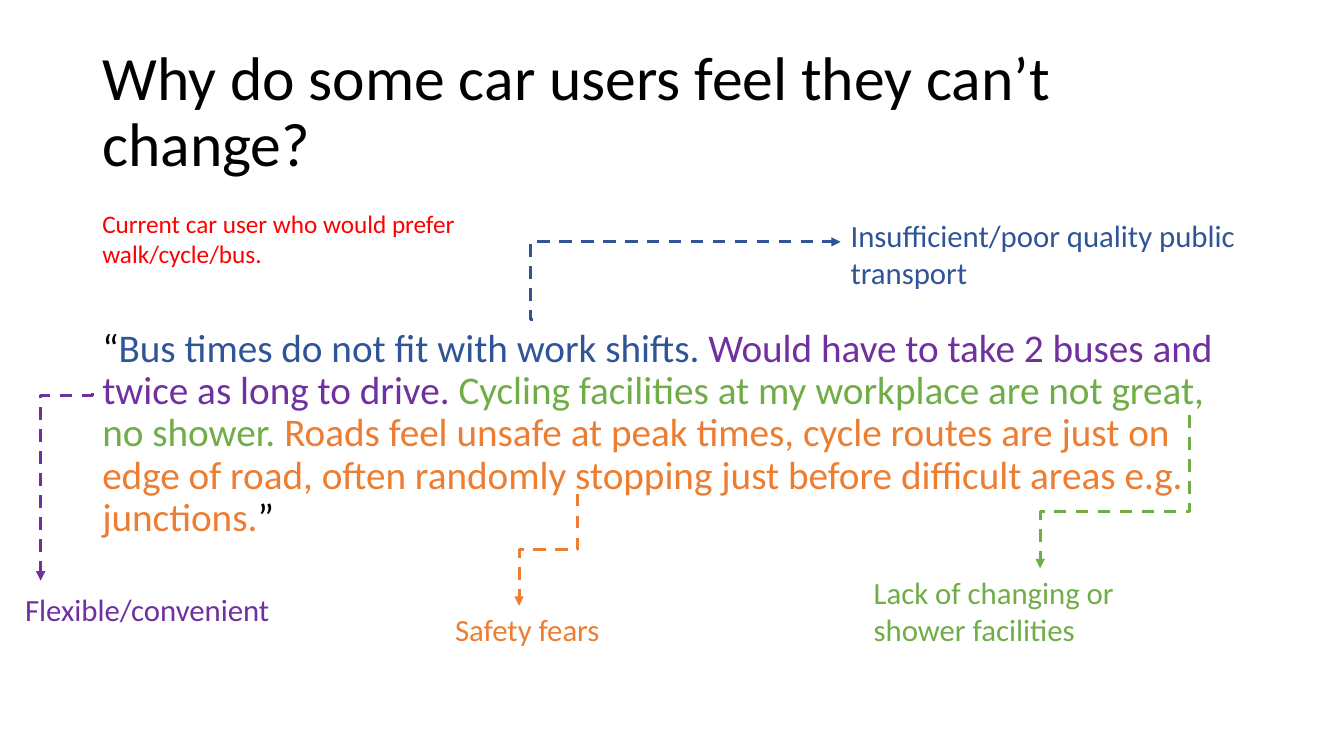
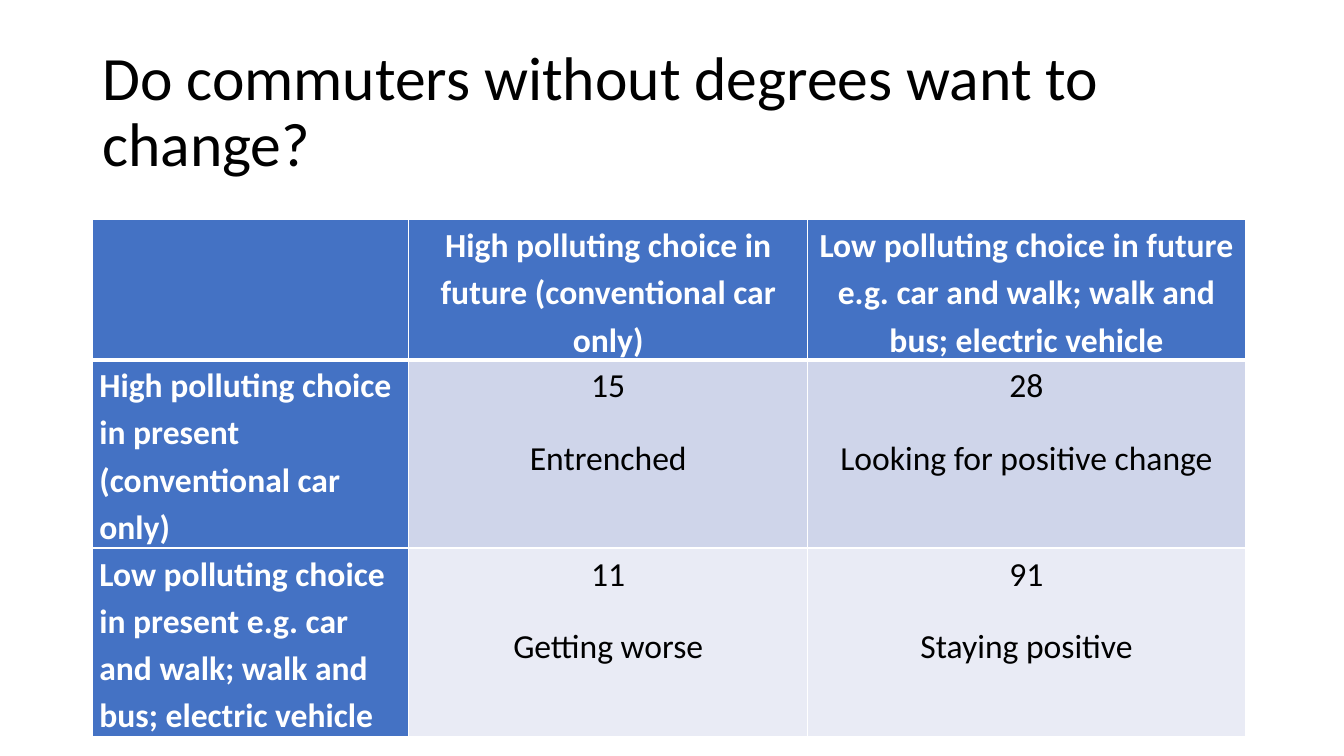
import lxml.etree
import pptx
import pptx.dml.color
import pptx.enum.dml
import pptx.enum.shapes
import pptx.enum.text
import pptx.oxml.ns
import pptx.util

Pt = pptx.util.Pt
RGB = pptx.dml.color.RGBColor
qn = pptx.oxml.ns.qn
ALIGN = pptx.enum.text.PP_ALIGN
ANCHOR = pptx.enum.text.MSO_ANCHOR

# Shared style
FONT = "Calibri"
LEFT = 66
BLACK = RGB(0x00, 0x00, 0x00)
WHITE = RGB(0xFF, 0xFF, 0xFF)
NAVY = RGB(0x2F, 0x55, 0x97)
PURPLE = RGB(0x70, 0x30, 0xA0)
GREEN = RGB(0x70, 0xAD, 0x47)
ORANGE = RGB(0xED, 0x7D, 0x31)
RED = RGB(0xFF, 0x00, 0x00)
BLUE = RGB(0x44, 0x72, 0xC4)
PALE = RGB(0xCF, 0xD5, 0xEA)
LIGHT = RGB(0xE9, 0xEB, 0xF5)


def style(run, size, color, bold=False):
    font = run.font
    font.name, font.size, font.bold = FONT, Pt(size), bold
    font.color.rgb = color


def add_text(slide, box, parts, size, space=1.0, anchor=ANCHOR.TOP):
    """One paragraph made of (words, colour) parts."""
    frame = slide.shapes.add_textbox(*map(Pt, box)).text_frame
    frame.word_wrap = True
    frame.vertical_anchor = anchor
    para = frame.paragraphs[0]
    para.line_spacing = space
    for words, color in parts:
        run = para.add_run()
        run.text = words
        style(run, size, color)


def add_page(deck, title):
    slide = deck.slides.add_slide(deck.slide_layouts[6])
    add_text(slide, (LEFT, 28.8, 828, 104.4), [(title, BLACK)], 44, 0.9, ANCHOR.MIDDLE)
    return slide


def add_bend(slide, start, end, color, bend=0.5, down=False):
    """Dashed elbow arrow; with down it leaves downwards and ends to the left."""
    (x1, y1), (x2, y2) = start, end
    if down:
        # A quarter turn swaps the sides of the box about its centre
        mid_x, mid_y = (x1 + x2) / 2, (y1 + y2) / 2
        half_w, half_h = (y2 - y1) / 2, (x1 - x2) / 2
        x1, x2 = mid_x - half_w, mid_x + half_w
        y1, y2 = mid_y - half_h, mid_y + half_h
    kind = pptx.enum.shapes.MSO_CONNECTOR.ELBOW
    link = slide.shapes.add_connector(kind, Pt(x1), Pt(y1), Pt(x2), Pt(y2))
    link.line.color.rgb = color
    link.line.width = Pt(2.25)
    link.line.dash_style = pptx.enum.dml.MSO_LINE.DASH
    props = link._element.spPr
    if down:
        props.find(qn("a:xfrm")).set("rot", "5400000")
    guides = props.find(qn("a:prstGeom")).get_or_add_avLst()
    lxml.etree.SubElement(guides, qn("a:gd"), name="adj1", fmla=f"val {round(bend * 100000)}")
    lxml.etree.SubElement(props.find(qn("a:ln")), qn("a:tailEnd"), type="triangle")
    lxml.etree.SubElement(props, qn("a:effectLst"))


def add_edges(cell, base):
    """White cell borders, with the given width in points at the base."""
    props = cell._tc.get_or_add_tcPr()
    for i, (side, width) in enumerate([("L", 1), ("R", 1), ("T", 1), ("B", base)]):
        line = lxml.etree.Element(qn("a:ln" + side), w=str(Pt(width)))
        fill = lxml.etree.SubElement(line, qn("a:solidFill"))
        lxml.etree.SubElement(fill, qn("a:srgbClr"), val=str(WHITE))
        props.insert(i, line)


def fill_cell(cell, words, back, head, align, base):
    cell.fill.solid()
    cell.fill.fore_color.rgb = back
    add_edges(cell, base)
    cell.margin_left = cell.margin_right = Pt(5)
    cell.margin_top = cell.margin_bottom = Pt(0)
    cell.text_frame.text = words
    paras = cell.text_frame.paragraphs
    for i, para in enumerate(paras):
        para.alignment = align
        para.line_spacing = 1.15
        gap = 12 if i < len(paras) - 1 else 6
        para.space_before = para.space_after = Pt(gap)
        for run in para.runs:
            style(run, 24, WHITE if head else BLACK, head)


def add_grid(slide, rows, widths, heights, backs):
    """Table with a header row and a header column."""
    frame = slide.shapes.add_table(
        len(rows), len(widths), Pt(LEFT), Pt(157), Pt(sum(widths)), Pt(sum(heights)))
    table = frame.table
    table.horz_banding = table.first_row = False
    for col, width in zip(table.columns, widths):
        col.width = Pt(width)
    for r, (row, height) in enumerate(zip(rows, heights)):
        table.rows[r].height = Pt(height)
        for c, words in enumerate(row):
            head = r == 0 or c == 0
            fill_cell(table.cell(r, c), words, BLUE if head else backs[r], head,
                      ALIGN.CENTER if c else ALIGN.LEFT, 1 if r else 3)


def add_quote(deck):
    slide = add_page(deck, "Why do some car users feel they can’t change?")
    add_text(slide, (LEFT, 145.4, 356.4, 51), [
        ("Current car user who would prefer walk/cycle/bus.", RED)], 18)

    # Quote, one colour per theme
    add_text(slide, (LEFT, 231, 828, 301), [
        ("“", BLACK),
        ("Bus times do not fit with work shifts. ", NAVY),
        ("Would have to take 2 buses and twice as long to drive. ", PURPLE),
        ("Cycling facilities at my workplace are not great, no shower. ", GREEN),
        ("Roads feel unsafe at peak times, cycle routes are just on edge of road, "
         "often randomly stopping just before difficult areas e.g. junctions.", ORANGE),
        ("”", BLACK)], 28, 0.9)

    # Theme labels
    for words, color, box in [
        ("Insufficient/poor quality public transport", NAVY, (600.5, 151.2, 293, 60.5)),
        ("Lack of changing or shower facilities", GREEN, (617, 406, 252, 60.5)),
        ("Safety fears", ORANGE, (318, 432.7, 145.4, 34)),
        ("Flexible/convenient", PURPLE, (10.8, 418.3, 401.8, 34)),
    ]:
        add_text(slide, box, [(words, color)], 22)

    # Arrows from quote to labels
    add_bend(slide, (380.9, 228.3), (600.5, 172.8), NAVY, -0.01)
    add_bend(slide, (412.6, 352.8), (370.8, 432.7), ORANGE, down=True)
    add_bend(slide, (849.6, 296.6), (743, 406), GREEN, 0.63, down=True)
    add_bend(slide, (66, 281), (29, 414.7), PURPLE, 0.01, down=True)


def add_change(deck):
    slide = add_page(deck, "Do commuters without degrees want to change?")
    rows = [
        ("", "High polluting choice in future (conventional car only)",
         "Low polluting choice in future e.g. car and walk; walk and bus; electric vehicle"),
        ("High polluting choice in present (conventional car only)",
         "15\nEntrenched", "28\nLooking for positive change"),
        ("Low polluting choice in present e.g. car and walk; walk and bus; electric vehicle",
         "11\nGetting worse", "91\nStaying positive"),
    ]
    add_grid(slide, rows, (226, 285, 312.5), (100, 134.5, 134.5), (BLUE, PALE, LIGHT))


def main():
    deck = pptx.Presentation()
    deck.slide_width, deck.slide_height = Pt(960), Pt(540)
    add_quote(deck)
    add_change(deck)
    deck.save("out.pptx")


if __name__ == "__main__":
    main()
